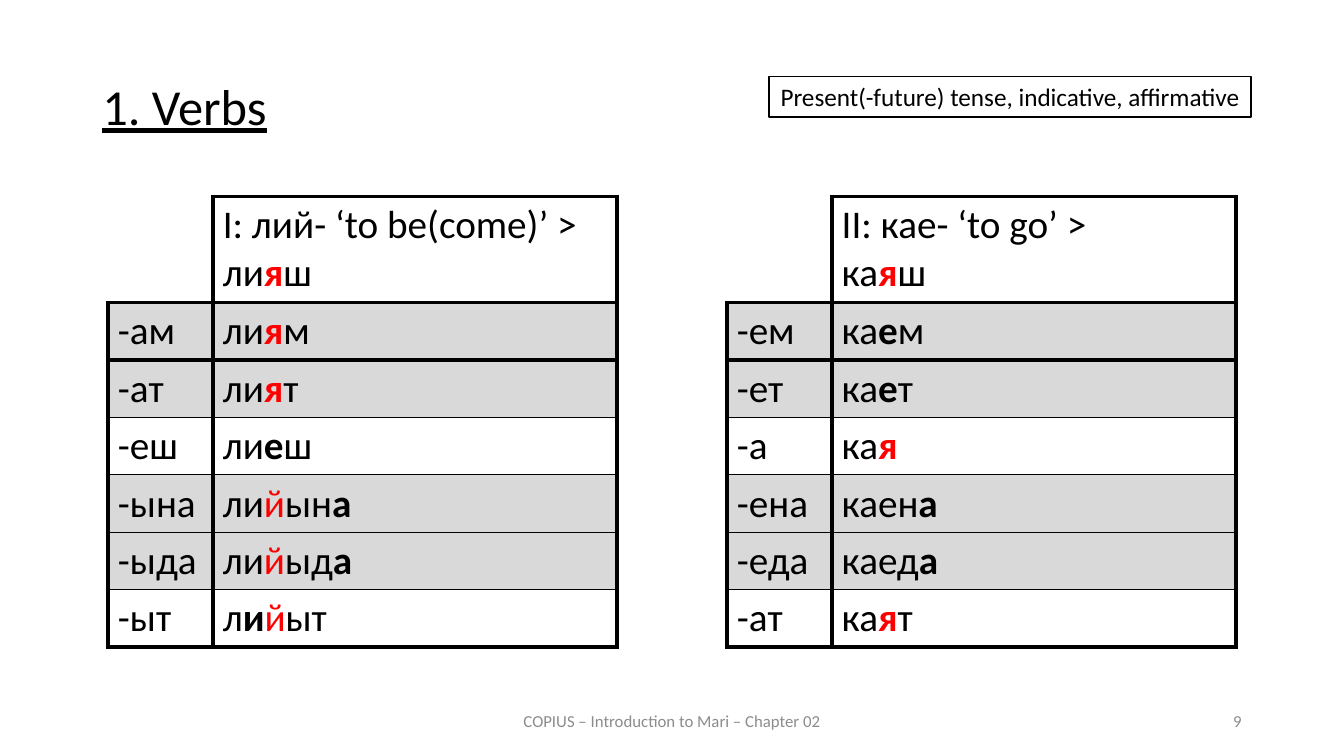
from dataclasses import dataclass

from lxml.etree import SubElement
from pptx import Presentation
from pptx.dml.color import RGBColor
from pptx.enum.shapes import MSO_SHAPE as Shape
from pptx.enum.text import MSO_ANCHOR as Anchor, PP_ALIGN as Align
from pptx.oxml.ns import qn
from pptx.util import Inches, Pt

BLACK = RGBColor(0x00, 0x00, 0x00)
WHITE = RGBColor(0xFF, 0xFF, 0xFF)
RED = RGBColor(0xFF, 0x00, 0x00)
GRAY = RGBColor(0x8C, 0x8C, 0x8C)
SHADE = RGBColor(0xD9, 0xD9, 0xD9)

FONT = "Calibri"
WIDE, HIGH = Inches(13.333), Inches(7.5)
THICK, THIN = 3, 1

# Table lengths, in percent of the slide's width or height
TOP, HEAD, ROW = 26, 14, 7.6
COLS = (7.8, 30.08)
SHADED = {1, 2, 4, 5}
HEAVY = {0, 1, 2, 7}


@dataclass(frozen=True)
class Area:
    """Place and size in percent of the slide."""
    left: float
    top: float
    width: float
    height: float

    def box(self) -> tuple[int, int, int, int]:
        return across(self.left), down(self.top), across(self.width), down(self.height)


@dataclass(frozen=True)
class Verb:
    """A conjugation: * toggles bold and ~ toggles red in its forms."""
    left: float
    title: str
    forms: tuple[tuple[str, str], ...]


VERBS = (
    Verb(8.03, "I: лий- ‘to be(come)’ >\nли*~я~*ш", (
        ("-ам", "ли*~я~*м"),
        ("-ат", "ли*~я~*т"),
        ("-еш", "ли*е*ш"),
        ("-ына", "ли~й~ын*а*"),
        ("-ыда", "ли~й~ыд*а*"),
        ("-ыт", "л*и*~й~ыт"),
    )),
    Verb(54.08, "II: кае- ‘to go’ >\nка*~я~*ш", (
        ("-ем", "ка*е*м"),
        ("-ет", "ка*е*т"),
        ("-а", "ка*~я~*"),
        ("-ена", "каен*а*"),
        ("-еда", "каед*а*"),
        ("-ат", "ка*~я~*т"),
    )),
)


def across(share: float) -> int:
    return round(WIDE * share / 100)


def down(share: float) -> int:
    return round(HIGH * share / 100)


def split(line: str) -> list[tuple[str, bool, bool]]:
    """Cut a marked line into (text, bold, red) parts."""
    parts = []
    for i, chunk in enumerate(line.split("*")):
        for j, text in enumerate(chunk.split("~")):
            if text:
                parts.append((text, i % 2 == 1, j % 2 == 1))
    return parts


def write(frame, text: str, *, size: float, color=BLACK, align=Align.LEFT,
          anchor=Anchor.TOP, under: bool = False, wrap: bool = True,
          space: float = 1.0) -> None:
    frame.word_wrap = wrap
    frame.vertical_anchor = anchor
    for i, line in enumerate(text.split("\n")):
        para = frame.add_paragraph() if i else frame.paragraphs[0]
        para.alignment = align
        para.line_spacing = space
        for part, bold, red in split(line):
            run = para.add_run()
            run.text = part
            font = run.font
            font.name, font.size = FONT, Pt(size)
            font.bold, font.underline = bold, under
            font.color.rgb = RED if red else color


def label(slide, area: Area, text: str, **style) -> None:
    write(slide.shapes.add_textbox(*area.box()).text_frame, text, **style)


def edge(cell, side: str, width: float) -> None:
    """Draw one cell border; a width of 0 hides it."""
    line = SubElement(cell._tc.get_or_add_tcPr(), qn(f"a:ln{side}"), w=str(Pt(width)))
    if width:
        fill = SubElement(line, qn("a:solidFill"))
        SubElement(fill, qn("a:srgbClr"), val=str(BLACK))
    else:
        SubElement(line, qn("a:noFill"))


def grid(slide, verb: Verb) -> None:
    rows = (("", verb.title), *verb.forms)
    area = Area(verb.left, TOP, sum(COLS), HEAD + ROW * len(verb.forms))
    table = slide.shapes.add_table(len(rows), len(COLS), *area.box()).table
    table.first_row = table.horz_banding = False
    for col, width in zip(table.columns, COLS):
        col.width = across(width)
    for r, texts in enumerate(rows):
        table.rows[r].height = down(ROW if r else HEAD)
        for c, text in enumerate(texts):
            cell = table.cell(r, c)
            corner = r == c == 0
            edge(cell, "L", 0 if corner else THICK)
            edge(cell, "R", THICK)
            edge(cell, "T", 0 if corner else THICK if r in HEAVY else THIN)
            edge(cell, "B", THICK if r + 1 in HEAVY else THIN)
            if r in SHADED:
                cell.fill.solid()
                cell.fill.fore_color.rgb = SHADE
            else:
                cell.fill.background()
            write(cell.text_frame, text, size=28)


def badge(slide, area: Area, text: str) -> None:
    shape = slide.shapes.add_shape(Shape.RECTANGLE, *area.box())
    shape.shadow.inherit = False
    shape.fill.solid()
    shape.fill.fore_color.rgb = WHITE
    shape.line.color.rgb = BLACK
    shape.line.width = Pt(THIN)
    write(shape.text_frame, text, size=18, align=Align.CENTER, wrap=False)


def main() -> None:
    deck = Presentation()
    deck.slide_width, deck.slide_height = WIDE, HIGH
    slide = deck.slides.add_slide(deck.slide_layouts[6])
    label(slide, Area(6.88, 10.13, 86.25, 79.73), "1. Verbs", size=36,
          align=Align.JUSTIFY, under=True, space=0.9)
    foot = {"size": 12, "color": GRAY, "anchor": Anchor.MIDDLE}
    label(slide, Area(33.13, 92.67, 33.75, 5.33),
          "COPIUS – Introduction to Mari – Chapter 02", align=Align.CENTER, **foot)
    label(slide, Area(70.63, 92.67, 22.5, 5.33), "9", align=Align.RIGHT, **foot)
    for verb in VERBS:
        grid(slide, verb)
    badge(slide, Area(57.23, 10.13, 35.85, 5.33),
          "Present(-future) tense, indicative, affirmative")
    deck.save("out.pptx")


if __name__ == "__main__":
    main()
